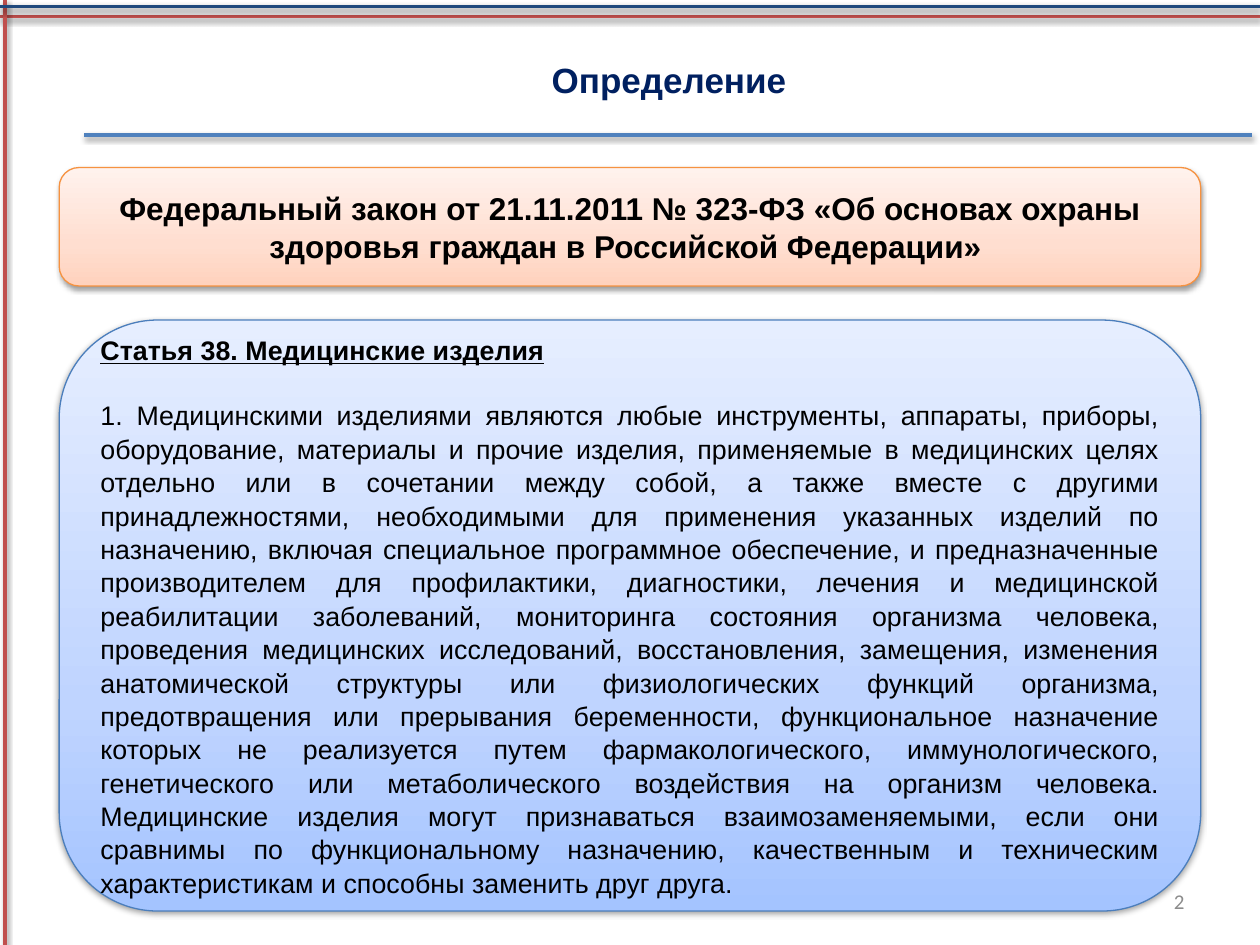
from copy import deepcopy

from pptx import Presentation
from pptx.dml.color import RGBColor
from pptx.enum.shapes import MSO_CONNECTOR, MSO_SHAPE
from pptx.enum.text import MSO_ANCHOR, PP_ALIGN
from pptx.oxml import parse_xml
from pptx.oxml.ns import nsdecls, qn
from pptx.util import Inches, Pt

LINE = MSO_CONNECTOR.STRAIGHT
ROUNDED = MSO_SHAPE.ROUNDED_RECTANGLE
MIDDLE = MSO_ANCHOR.MIDDLE
CENTER, RIGHT, JUSTIFY = PP_ALIGN.CENTER, PP_ALIGN.RIGHT, PP_ALIGN.JUSTIFY

LAW = "Федеральный закон от 21.11.2011 № 323-ФЗ «Об основах охраны здоровья граждан в Российской Федерации» "
ARTICLE = "Статья 38. Медицинские изделия"
DEFINITION = " ".join([
    "1. Медицинскими изделиями являются любые инструменты, аппараты, приборы,",
    "оборудование, материалы и прочие изделия, применяемые в медицинских целях",
    "отдельно или в сочетании между собой, а также вместе с другими",
    "принадлежностями, необходимыми для применения указанных изделий по",
    "назначению, включая специальное программное обеспечение, и предназначенные",
    "производителем для профилактики, диагностики, лечения и медицинской",
    "реабилитации заболеваний, мониторинга состояния организма человека,",
    "проведения медицинских исследований, восстановления, замещения, изменения",
    "анатомической структуры или физиологических функций организма,",
    "предотвращения или прерывания беременности, функциональное назначение",
    "которых не реализуется путем фармакологического, иммунологического,",
    "генетического или метаболического воздействия на организм человека.",
    "Медицинские изделия могут признаваться взаимозаменяемыми, если они",
    "сравнимы по функциональному назначению, качественным и техническим",
    "характеристикам и способны заменить друг друга.",
])


def rgb(value):
    return RGBColor.from_string(value)


def add_soft_shadow(shape):
    """Must follow the line settings, since effects come after a:ln."""
    shape._element.spPr.append(parse_xml(
        f'<a:effectLst {nsdecls("a")}>'
        '<a:outerShdw blurRad="40000" dist="20000" dir="5400000" rotWithShape="0">'
        '<a:srgbClr val="000000"><a:alpha val="38000"/></a:srgbClr>'
        '</a:outerShdw></a:effectLst>'))


prs = Presentation()
prs.slide_width, prs.slide_height = Inches(10), Inches(7.5)
U = prs.slide_width // 1000  # grid of 1000 columns by 750 rows
s = prs.slides.add_slide(prs.slide_layouts[6])

# Frame lines and the rule under the title
for x1, y1, x2, y2, color in [
    (1000, 13, 0, 13, "C0504D"),
    (4, 0, 4, 750, "C0504D"),
    (0, 5, 1000, 5, "1F497D"),
    (67, 107, 994, 107, "4F81BD"),
]:
    rule = s.shapes.add_connector(LINE, x1 * U, y1 * U, x2 * U, y2 * U)
    rule.line.color.rgb = rgb(color)
    rule.line.width = Pt(2)
    add_soft_shadow(rule)

# Cards with a three-stop gradient running upwards
frames = []
for top, height, stops, border in [
    (133, 94, ("FFD2BD", "FFDED0", "FFF2ED"), "F69240"),
    (254, 469, ("A4C4FF", "BFD4FF", "E6EEFF"), "4B7EBC"),
]:
    card = s.shapes.add_shape(ROUNDED, 47 * U, top * U, 906 * U, height * U)
    card.fill.gradient()
    card.fill.gradient_angle = 90
    stop_list = card._element.spPr.find(qn("a:gradFill")).find(qn("a:gsLst"))
    stop_list.append(deepcopy(stop_list[-1]))
    for stop, position, color in zip(card.fill.gradient_stops, (0, 0.35, 1), stops):
        stop.position = position
        stop.color.rgb = rgb(color)
    card.line.color.rgb = rgb(border)
    card.line.width = Pt(0.75)
    add_soft_shadow(card)
    frames.append(card.text_frame)
law, article = frames

title = s.shapes.add_textbox(62 * U, 16 * U, 938 * U, 94 * U).text_frame
number = s.shapes.add_textbox(717 * U, 695 * U, 233 * U, 40 * U).text_frame

for tf, lines, align, size, font, color, bold in [
    (title, ["Определение"], CENTER, 20, "Arial", "002060", True),
    (law, [LAW], CENTER, 18, "Arial", "000000", True),
    (article, [ARTICLE, DEFINITION], JUSTIFY, 15.3, "Arial", "000000", False),
    (number, ["2"], RIGHT, 12, "Calibri", "8C8C8C", False),
]:
    tf.text = "\n".join(lines)
    tf.word_wrap = True
    tf.vertical_anchor = MIDDLE
    for p in tf.paragraphs:
        p.alignment = align
        for r in p.runs:
            r.font.size = Pt(size)
            r.font.name = font
            r.font.bold = bold
            r.font.color.rgb = rgb(color)

for p in article.paragraphs:
    p.line_spacing = 1.04
heading = article.paragraphs[0]
heading.space_after = Pt(18.35)
heading.runs[0].font.bold = True
heading.runs[0].font.underline = True

prs.save("out.pptx")
